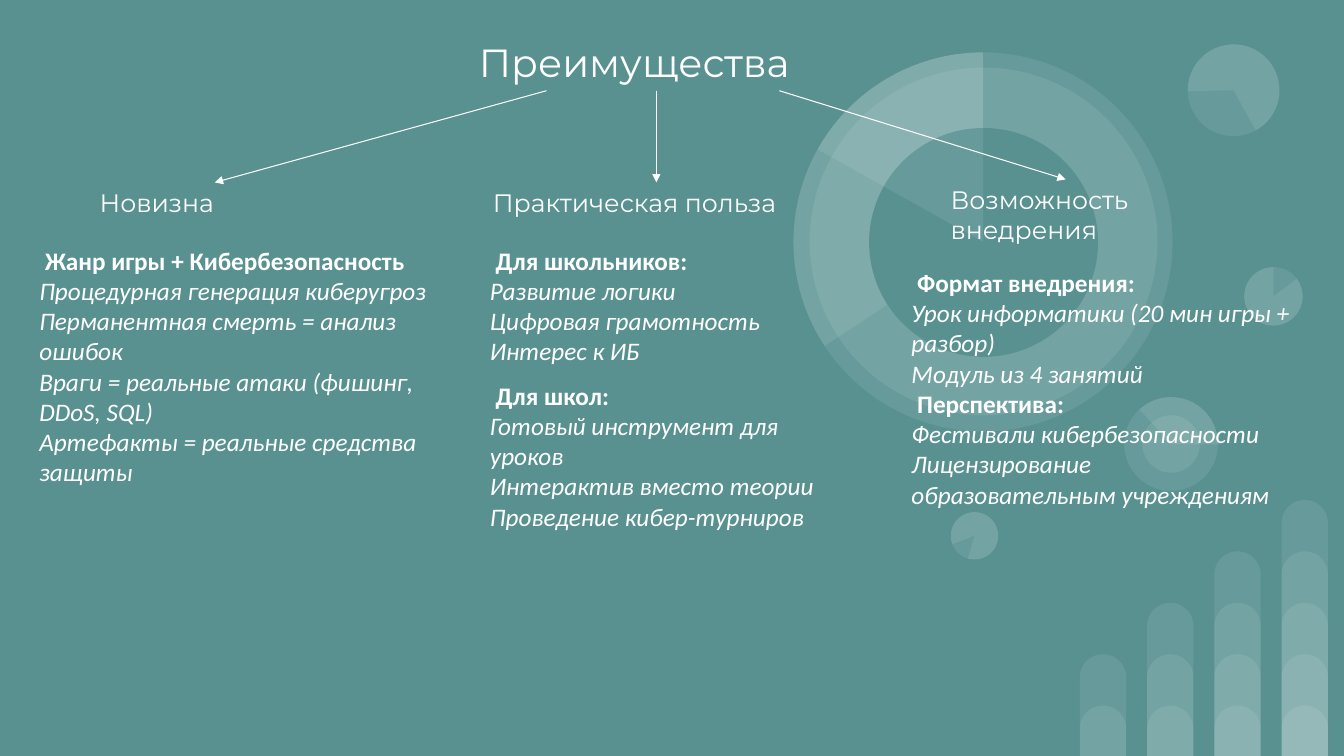
"""Build the slide about the advantages of a cybersecurity game."""
from lxml import etree
from pptx import Presentation
from pptx import util as u
from pptx.dml import color
from pptx.enum import shapes, text
from pptx.oxml import ns

BACKGROUND, WHITE = "599191", "FFFFFF"
KINDS = {
    "bar": shapes.MSO_SHAPE.ROUND_2_SAME_RECTANGLE,
    "ellipse": shapes.MSO_SHAPE.OVAL,
    "pie": shapes.MSO_SHAPE.PIE,
}


def paint(fill, hex_value, alpha=None):
    fill.solid()
    fill.fore_color.rgb = color.RGBColor.from_string(hex_value)
    if alpha:
        srgb = fill._xPr.find(".//" + ns.qn("a:srgbClr"))
        etree.SubElement(srgb, ns.qn("a:alpha")).set("val", str(alpha * 1000))


def write_text(shape, box, paragraphs, font_name, size):
    shape.left, shape.top, shape.width, shape.height = map(u.Inches, box)
    frame = shape.text_frame
    frame_format = {
        "word_wrap": True,
        "auto_size": text.MSO_AUTO_SIZE.NONE,
        "vertical_anchor": text.MSO_ANCHOR.TOP,
        "margin_left": u.Inches(0.1),
        "margin_right": u.Inches(0.1),
        "margin_top": u.Inches(0.05),
        "margin_bottom": u.Inches(0.05),
    }
    for name, value in frame_format.items():
        setattr(frame, name, value)
    for index, (words, bold, italic, space) in enumerate(paragraphs):
        paragraph = frame.add_paragraph() if index else frame.paragraphs[0]
        paragraph.alignment = text.PP_ALIGN.LEFT
        paragraph.space_before = u.Pt(space)
        properties = paragraph._p.get_or_add_pPr()
        properties.set("marL", "0")
        properties.set("indent", "0")
        etree.SubElement(properties, ns.qn("a:buNone"))
        run = paragraph.add_run()
        run.text = words
        run_format = {"name": font_name, "size": u.Pt(size), "bold": bold, "italic": italic}
        for name, value in run_format.items():
            setattr(run.font, name, value)
        paint(run.font.fill, WHITE)


presentation = Presentation()
presentation.slide_width = u.Inches(13.33)
presentation.slide_height = u.Inches(7.5)
slide = presentation.slides.add_slide(presentation.slide_layouts.get_by_name("Comparison"))
paint(slide.background.fill, BACKGROUND)
title, *bodies = list(slide.placeholders)
spare = bodies.pop()
spare.element.getparent().remove(spare.element)

bars = []
for column in range(4):
    for level in range(column + 2):
        height = 0.5 + 0.51 * level
        bars.append(("bar", 10.71 + 0.667 * column, 7.5 - height, 0.46, height, 0, (0.5, 0), WHITE))

circles = [
    ("ellipse", 12.34, 2.65, 0.58, 0, (), WHITE),
    ("ellipse", 9.43, 5.08, 0.47, 196.2, (), WHITE),
    ("ellipse", 11.15, 3.94, 0.93, 90, (), WHITE),
    ("pie", 11.15, 3.94, 0.93, 90, (82.45, 162.46), WHITE),
    ("ellipse", 11.33, 4.12, 0.57, 90, (), WHITE),
    ("pie", 12.34, 2.65, 0.58, 0, (193.77, 162), WHITE),
    ("ellipse", 11.78, 0.44, 0.91, 215.9, (), WHITE),
    ("pie", 11.78, 0.44, 0.91, 215.9, (193.77, 123.14), WHITE),
    ("ellipse", 7.87, 0.52, 3.76, 0, (), WHITE),
    ("ellipse", 8.03, 0.67, 3.45, 34.1, (), WHITE),
    ("pie", 7.87, 0.52, 3.76, 0, (88.01, 162), WHITE),
    ("ellipse", 8.62, 1.27, 2.27, 34.1, (), BACKGROUND),
    ("pie", 7.87, 0.52, 3.76, 0, (125.54, 162), WHITE),
    ("pie", 9.43, 5.08, 0.47, 196.2, (193.77, 162), WHITE),
]
charts = [(kind, left, top, size, size, *rest) for kind, left, top, size, *rest in circles]

for decorations in (bars, charts):
    group = slide.shapes.add_group_shape()
    for kind, left, top, width, height, rotation, adjustments, fill in decorations:
        shape = group.shapes.add_shape(KINDS[kind], *map(u.Inches, (left, top, width, height)))
        shape.shadow.inherit = False
        shape.rotation = rotation
        for index, adjustment in enumerate(adjustments):
            shape.adjustments[index] = adjustment
        paint(shape.fill, fill, 9 if fill == WHITE else None)
        shape.line.fill.background()

slide.shapes.element.append(title.element)
write_text(title, (4.65, 0.33, 3.72, 0.57), [("Преимущества", False, False, 0)], "Montserrat", 28)

headings = [
    ("Новизна", (0.89, 1.81, 2.47, 0.4)),
    ("Практическая польза", (4.79, 1.81, 3.44, 0.4)),
    ("Возможность внедрения", (9.33, 1.78, 2.47, 0.71)),
]
for words, box in headings:
    heading = slide.shapes.add_textbox(*map(u.Inches, box))
    write_text(heading, box, [(words, False, False, 0)], "Montserrat", 18)

for ends in ((5.42, 0.9, 2.13, 1.81), (6.51, 0.9, 6.51, 1.81), (7.73, 0.9, 10.57, 1.78)):
    arrow = slide.shapes.add_connector(shapes.MSO_CONNECTOR.STRAIGHT, *map(u.Inches, ends))
    arrow.line.width = u.Pt(0.75)
    paint(arrow.line.fill, WHITE)
    etree.SubElement(arrow.line._get_or_add_ln(), ns.qn("a:tailEnd")).set("type", "triangle")
    etree.SubElement(arrow._element.spPr, ns.qn("a:effectLst"))

columns = [
    ((0.29, 2.38, 4.14, 2.52), [
        (" Жанр игры + Кибербезопасность", True, False, 0),
        ("Процедурная генерация киберугроз", False, True, 0),
        ("Перманентная смерть = анализ ошибок", False, True, 0),
        ("Враги = реальные атаки (фишинг, DDoS, SQL)", False, True, 0),
        ("Артефакты = реальные средства защиты", False, True, 0),
    ]),
    ((4.76, 2.38, 3.82, 2.97), [
        (" Для школьников:", True, False, 0),
        ("Развитие логики", False, True, 0),
        ("Цифровая грамотность", False, True, 0),
        ("Интерес к ИБ", False, True, 0),
        (" Для школ:", True, False, 10),
        ("Готовый инструмент для уроков", False, True, 0),
        ("Интерактив вместо теории", False, True, 0),
        ("Проведение кибер-турниров", False, True, 0),
    ]),
    ((8.94, 2.6, 4.05, 2.52), [
        (" Формат внедрения:", True, False, 0),
        ("Урок информатики (20 мин игры + разбор)", False, True, 0),
        ("Модуль из 4 занятий", False, True, 0),
        (" Перспектива:", True, False, 0),
        ("Фестивали кибербезопасности", False, True, 0),
        ("Лицензирование образовательным учреждениям", False, True, 0),
    ]),
]
for body, (box, paragraphs) in zip(bodies, columns):
    slide.shapes.element.append(body.element)
    write_text(body, box, paragraphs, "Calibri", 18)

presentation.save("out.pptx")
